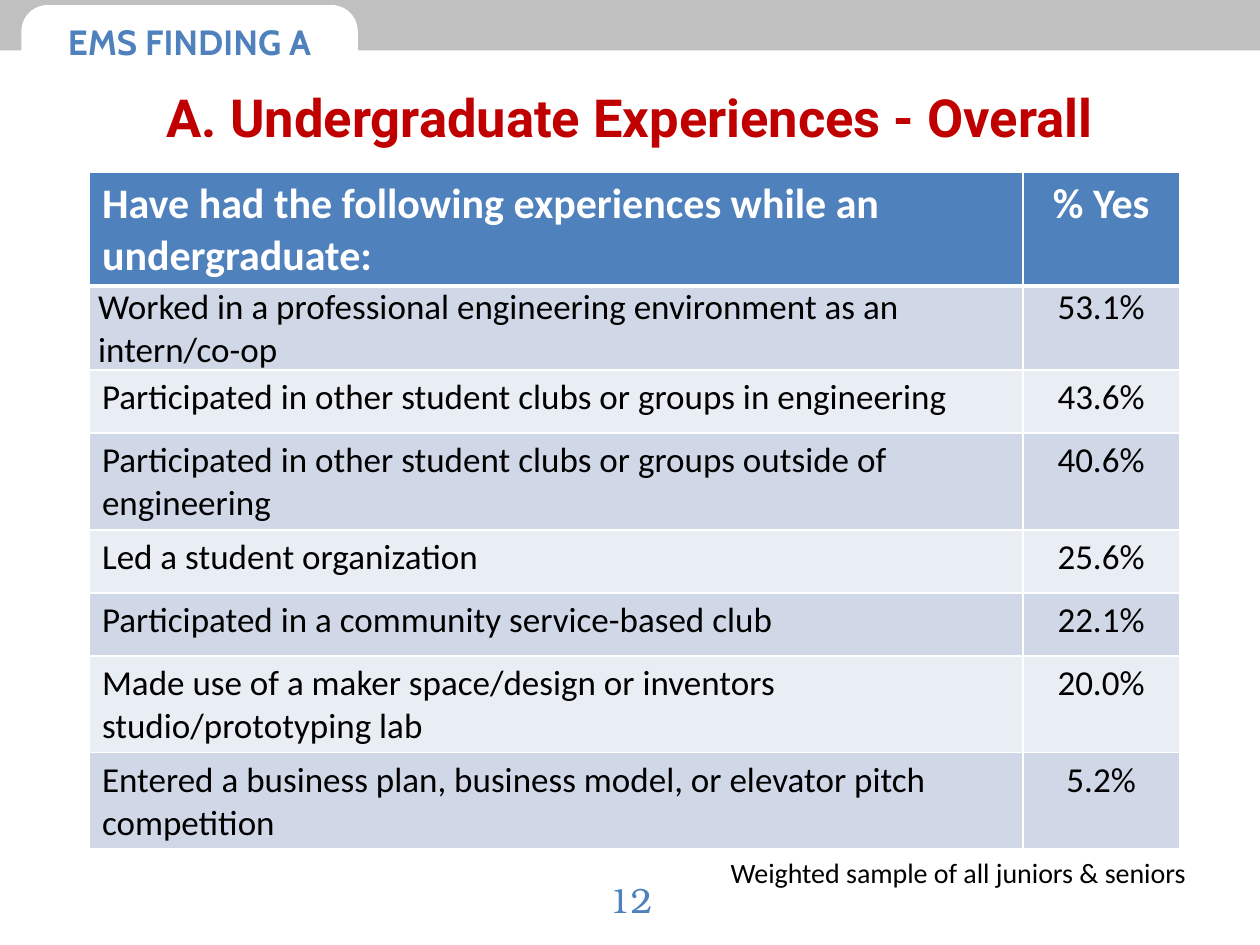
from lxml import etree
from pptx import Presentation
from pptx import util as u
from pptx.dml.color import RGBColor
from pptx.enum import shapes, text
from pptx.oxml.ns import qn

hues = {"blue": "4F81BD", "red": "C00000", "gray": "C0C0C0", "white": "FFFFFF",
        "black": "000000", "dark": "D0D8E8", "light": "E9EDF4"}
mid, left = text.PP_ALIGN.CENTER, text.PP_ALIGN.LEFT

deck = Presentation()
deck.slide_width, deck.slide_height = u.Inches(10), u.Inches(7.5)
col, row = deck.slide_width / 100, deck.slide_height / 100
slide = deck.slides.add_slide(deck.slide_layouts[6])


def area(x, y, w, h):
    return int(x * col), int(y * row), int(w * col), int(h * row)


def write(frame, words, size, face, hue, bold=False, align=mid):
    frame.text = words
    para = frame.paragraphs[0]
    para.alignment = align
    font = para.runs[0].font
    font.size, font.name, font.bold = u.Pt(size), face, bold
    font.color.rgb = RGBColor.from_string(hues[hue])


page = slide.shapes.add_textbox(*area(44.2, 92.27, 11.7, 6.67)).text_frame
page.word_wrap = True
write(page, "12", 20, "TeX Gyre Bonum", "blue")

kinds = shapes.MSO_SHAPE
for kind, spot, hue in [
    (kinds.RECTANGLE, (0, 0, 100, 5.33), "gray"),
    (kinds.ROUNDED_RECTANGLE, (1.7, 0.53, 26.7, 7.73), "white"),
]:
    tab = slide.shapes.add_shape(kind, *area(*spot))
    tab.shadow.inherit = False
    tab.fill.solid()
    tab.fill.fore_color.rgb = RGBColor.from_string(hues[hue])
    tab.line.fill.background()
tab.adjustments[0] = 0.36
label = tab.text_frame
label.margin_left = label.margin_right = label.margin_top = label.margin_bottom = 0
label.word_wrap = False
label.vertical_anchor = text.MSO_ANCHOR.MIDDLE
write(label, "EMS FINDING A", 20, "Cabin", "blue", True)

title = slide.shapes.add_textbox(*area(6.4, 4, 87.2, 16.67)).text_frame
title.word_wrap = True
title.vertical_anchor = text.MSO_ANCHOR.MIDDLE
write(title, "A. Undergraduate Experiences - Overall", 30, "Roboto", "red", True)

rows = [
    ("Have had the following experiences while an undergraduate:", "% Yes"),
    ("Worked in a professional engineering environment as an intern/co-op", "53.1%"),
    ("Participated in other student clubs or groups in engineering", "43.6%"),
    ("Participated in other student clubs or groups outside of engineering", "40.6%"),
    ("Led a student organization", "25.6%"),
    ("Participated in a community service-based club", "22.1%"),
    ("Made use of a maker space/design or inventors studio/prototyping lab", "20.0%"),
    ("Entered a business plan, business model, or elevator pitch competition", "5.2%"),
]
table = slide.shapes.add_table(len(rows), 2, *area(7.1, 18.27, 86.5, 57.09)).table
for i, share in enumerate((74.1, 12.4)):
    table.columns[i].width = int(share * col)
for r, pair in enumerate(rows):
    head = r == 0
    table.rows[r].height = int((10.4 if head else 6.67) * row)
    for c, words in enumerate(pair):
        cell = table.cell(r, c)
        write(cell.text_frame, words, 24 if head else 20, "Calibri",
              "white" if head else "black", head, mid if c else left)
        if r == 1:
            cell.margin_left = cell.margin_right = u.Inches(0.07)
            cell.margin_top = cell.margin_bottom = 0
        props = cell._tc.get_or_add_tcPr()
        for side in ("L", "R", "T", "B"):
            thick = (head and side == "B") or (r == 1 and side == "T")
            edge = etree.SubElement(props, qn(f"a:ln{side}"), w=str(u.Pt(3 if thick else 1)))
            paint = etree.SubElement(edge, qn("a:solidFill"))
            etree.SubElement(paint, qn("a:srgbClr"), val=hues["white"])
        cell.fill.solid()
        shade = "blue" if head else "dark" if r % 2 else "light"
        cell.fill.fore_color.rgb = RGBColor.from_string(hues[shade])

note = slide.shapes.add_textbox(*area(57, 89.87, 39.1, 4.93)).text_frame
note.word_wrap = True
write(note, "Weighted sample of all juniors & seniors", 16, "Calibri", "black", align=left)

deck.save("out.pptx")
